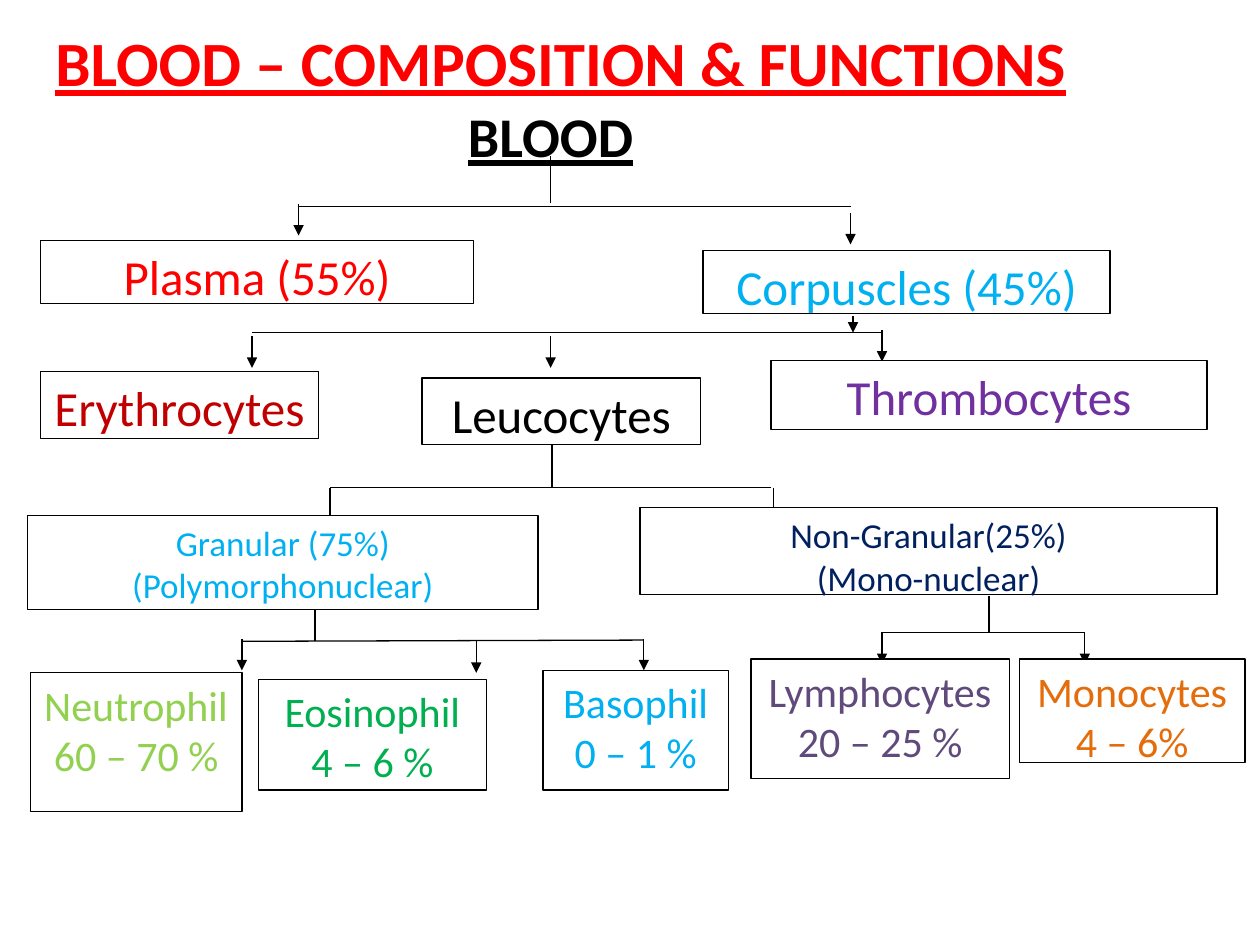
from pptx import Presentation
from pptx.dml.color import RGBColor
from pptx.enum.shapes import MSO_CONNECTOR as Connector, MSO_SHAPE as Shape
from pptx.enum.text import MSO_ANCHOR as Anchor, MSO_AUTO_SIZE as AutoSize, PP_ALIGN as Align
from pptx.oxml.ns import qn
from pptx.util import Inches, Pt
from lxml import etree


def rgb(value):
    return RGBColor.from_string(value)


def write(frame, text, size, color, heading=False, anchor=Anchor.TOP):
    frame.text = text
    frame.word_wrap = True
    frame.auto_size = AutoSize.NONE
    frame.vertical_anchor = anchor
    for paragraph in frame.paragraphs:
        paragraph.alignment = Align.CENTER
        for run in paragraph.runs:
            run.font.name = "Calibri"
            run.font.size = Pt(size)
            run.font.color.rgb = rgb(color)
            run.font.bold = heading
            run.font.underline = heading


prs = Presentation()
prs.slide_width, prs.slide_height = Inches(10), Inches(7.5)
slide = prs.slides.add_slide(prs.slide_layouts[5])

# Title
title = slide.shapes.title
title.left, title.top = Inches(-0.31), Inches(0.05)
title.width, title.height = Inches(9.52), Inches(0.76)
write(title.text_frame, "BLOOD – COMPOSITION & FUNCTIONS", 36, "FF0000", heading=True)
title.text_frame.paragraphs[0].line_spacing = 1.15
title.text_frame.paragraphs[0].space_after = Pt(10)

# Branches: x1, y1, x2, y2
branches = [
    (4.37, 1.24, 4.37, 1.61), (2.37, 1.64, 6.75, 1.64),  # blood
    (7, 2.64, 2, 2.64),                                  # corpuscles
    (4.38, 3.5, 4.38, 3.87), (2.62, 3.87, 6.12, 3.87),   # leucocytes
    (2.5, 4.84, 2.5, 5.09), (1.92, 5.09, 5.11, 5.08),    # granular
    (7.85, 4.73, 7.85, 5.02), (7, 5.02, 8.61, 5.02),     # non-granular
]

# Downward arrows: x, top, length
arrows = [
    (2.37, 1.62, 0.25), (6.75, 1.69, 0.25),
    (6.77, 2.51, 0.13),
    (2, 2.67, 0.25), (4.37, 2.67, 0.25), (7, 2.62, 0.25),
    (2.62, 3.87, 0.38), (6.14, 3.87, 0.38),
    (1.92, 5.07, 0.25), (3.78, 5.09, 0.25), (5.11, 5.07, 0.25),
    (7, 5.02, 0.25), (8.61, 5.02, 0.25),
]

links = [(ends, False) for ends in branches]
links += [((x, top, x, top + length), True) for x, top, length in arrows]
for ends, has_head in links:
    link = slide.shapes.add_connector(Connector.STRAIGHT, *map(Inches, ends))
    link.line.color.rgb = rgb("000000")
    link.line.width = Pt(0.75)
    if has_head:
        etree.SubElement(link.line._get_or_add_ln(), qn("a:tailEnd"), type="triangle")
    etree.SubElement(link._element.spPr, qn("a:effectLst"))

# Blood components: left, top, width, height, text, size, text colour
components = [
    (0.32, 1.91, 3.44, 0.5, "Plasma (55%)", 28, "FF0000"),
    (5.58, 1.99, 3.23, 0.5, "Corpuscles (45%)", 28, "00B0F0"),
    (0.32, 2.95, 2.21, 0.53, "Erythrocytes", 28, "C00000"),
    (3.35, 3, 2.21, 0.53, "Leucocytes", 28, "000000"),
    (6.12, 2.86, 3.46, 0.55, "Thrombocytes", 28, "7030A0"),
    (0.22, 4.09, 4.05, 0.75, "Granular (75%)\n(Polymorphonuclear)", 20, "00B0F0"),
    (5.08, 4.03, 4.58, 0.69, "Non-Granular(25%)\n(Mono-nuclear)", 20, "002060"),
    (0.24, 5.34, 1.68, 1.1, "Neutrophil\n60 – 70 %", 24, "92D050"),
    (2.05, 5.39, 1.81, 0.88, "Eosinophil\n4 – 6 %", 24, "00B050"),
    (4.31, 5.32, 1.47, 0.95, "Basophil\n0 – 1 %", 24, "00B0F0"),
    (5.96, 5.23, 2.05, 0.95, "Lymphocytes\n20 – 25 %", 24, "604A7B"),
    (8.09, 5.23, 1.79, 0.82, "Monocytes\n4 – 6%", 24, "E46C0A"),
]
for *place, label, size, color in components:
    component = slide.shapes.add_shape(Shape.RECTANGLE, *map(Inches, place))
    component.shadow.inherit = False
    component.fill.solid()
    component.fill.fore_color.rgb = rgb("FFFFFF")
    component.line.color.rgb = rgb("000000")
    component.line.width = Pt(0.75)
    write(component.text_frame, label, size, color)

# Root of the tree
blood = slide.shapes.add_textbox(Inches(1.37), Inches(0.75), Inches(6), Inches(0.64))
write(blood.text_frame, "BLOOD", 32, "000000", heading=True, anchor=Anchor.MIDDLE)

prs.save("out.pptx")
